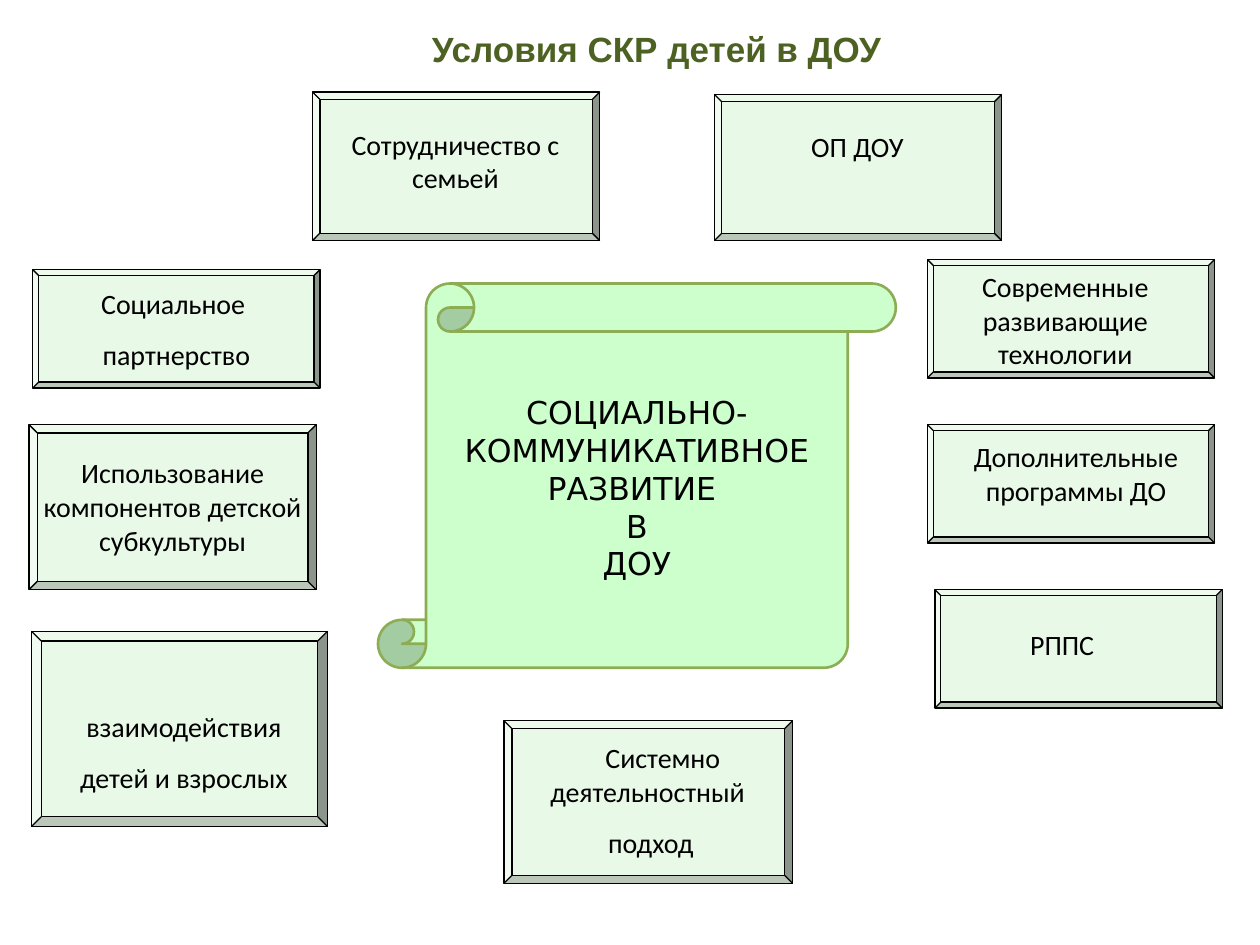
"""Build the slide on conditions for social and communicative development."""
from pptx import Presentation
from pptx.dml.color import RGBColor
from pptx.enum.shapes import MSO_SHAPE
from pptx.enum.text import MSO_ANCHOR, PP_ALIGN
from pptx.util import Inches, Pt


def rgb(value):
    return RGBColor.from_string(value)


def write(sp, lines, font="Calibri", size=16, color="000000", gap=10, wrap=True):
    tf = sp.text_frame
    tf.word_wrap = wrap
    for i, line in enumerate(lines):
        p = tf.paragraphs[0] if i == 0 else tf.add_paragraph()
        p.text = line
        p.alignment = PP_ALIGN.CENTER
        p.space_before = Pt(gap if i else 0)
        p.font.name = font
        p.font.size = Pt(size)
        p.font.color.rgb = rgb(color)
    return tf


prs = Presentation()
prs.slide_width = Inches(10)
prs.slide_height = Inches(7.5)
s = prs.slides.add_slide(prs.slide_layouts[6])

panels = {
    "program": (5.67, 0.75, 2.28, 1.16),
    "interaction": (0.25, 5.01, 2.35, 1.55),
    "subculture": (0.23, 3.37, 2.28, 1.31),
    "partnership": (0.26, 2.14, 2.28, 0.94),
    "family": (2.48, 0.73, 2.28, 1.18),
    "technologies": (7.36, 2.06, 2.28, 0.94),
    "approach": (4, 5.72, 2.29, 1.29),
    "environment": (7.42, 4.68, 2.28, 0.94),
    "extra": (7.36, 3.37, 2.28, 0.94),
}
bevels = {}
for name, box in panels.items():
    sp = s.shapes.add_shape(MSO_SHAPE.BEVEL, *map(Inches, box))
    sp.adjustments[0] = 0.05
    sp.shadow.inherit = False
    sp.fill.solid()
    sp.fill.fore_color.rgb = rgb("E9F9E8")
    sp.line.color.rgb = rgb("000000")
    sp.line.width = Pt(0.75)
    bevels[name] = sp

tf = write(bevels["partnership"], ["Социальное ", "партнерство"], wrap=False)
tf.vertical_anchor = MSO_ANCHOR.MIDDLE

labels = {
    "program": (5.74, 0.98, 2.13, 0.37, ["ОП ДОУ"]),
    "family": (2.55, 0.96, 2.13, 0.64, ["Сотрудничество с семьей"]),
    "subculture": (0.23, 3.57, 2.28, 0.9, ["Использование компонентов детской субкультуры"]),
    "technologies": (7.44, 2.09, 2.03, 0.9, ["Современные развивающие технологии"]),
    "interaction": (0.28, 5.58, 2.36, 0.77, ["взаимодействия", "детей и взрослых"]),
    "extra": (7.44, 3.44, 2.2, 0.64, ["Дополнительные программы ДО"]),
    "environment": (7.58, 4.93, 1.7, 0.37, ["РППС"]),
    "approach": (4.02, 5.83, 2.29, 1.04, ["Системно деятельностный ", "подход"]),
}
frames = {}
for name, (*box, lines) in labels.items():
    sp = s.shapes.add_textbox(*map(Inches, box))
    frames[name] = write(sp, lines)
pPr = frames["approach"].paragraphs[0]._p.get_or_add_pPr()
pPr.set("indent", str(Inches(0.19)))

sp = s.shapes.add_textbox(Inches(3.33), Inches(0.17), Inches(3.79), Inches(0.44))
tf = write(sp, ["Условия СКР детей в ДОУ"], "Arial", 20, "4D6222", wrap=False)
tf.paragraphs[0].alignment = PP_ALIGN.LEFT
tf.paragraphs[0].font.bold = True

sp = s.shapes.add_shape(MSO_SHAPE.VERTICAL_SCROLL, Inches(3), Inches(2.25), Inches(4.11), Inches(3.05))
sp.shadow.inherit = False
sp.fill.solid()
sp.fill.fore_color.rgb = rgb("CCFFCC")
sp.line.color.rgb = rgb("8DAD55")
sp.line.width = Pt(1.5)
tf = write(sp, ["СОЦИАЛЬНО-КОММУНИКАТИВНОЕ РАЗВИТИЕ ", "В", "ДОУ"], "DejaVu Sans", 18, gap=0)
tf.vertical_anchor = MSO_ANCHOR.MIDDLE

prs.save("out.pptx")
